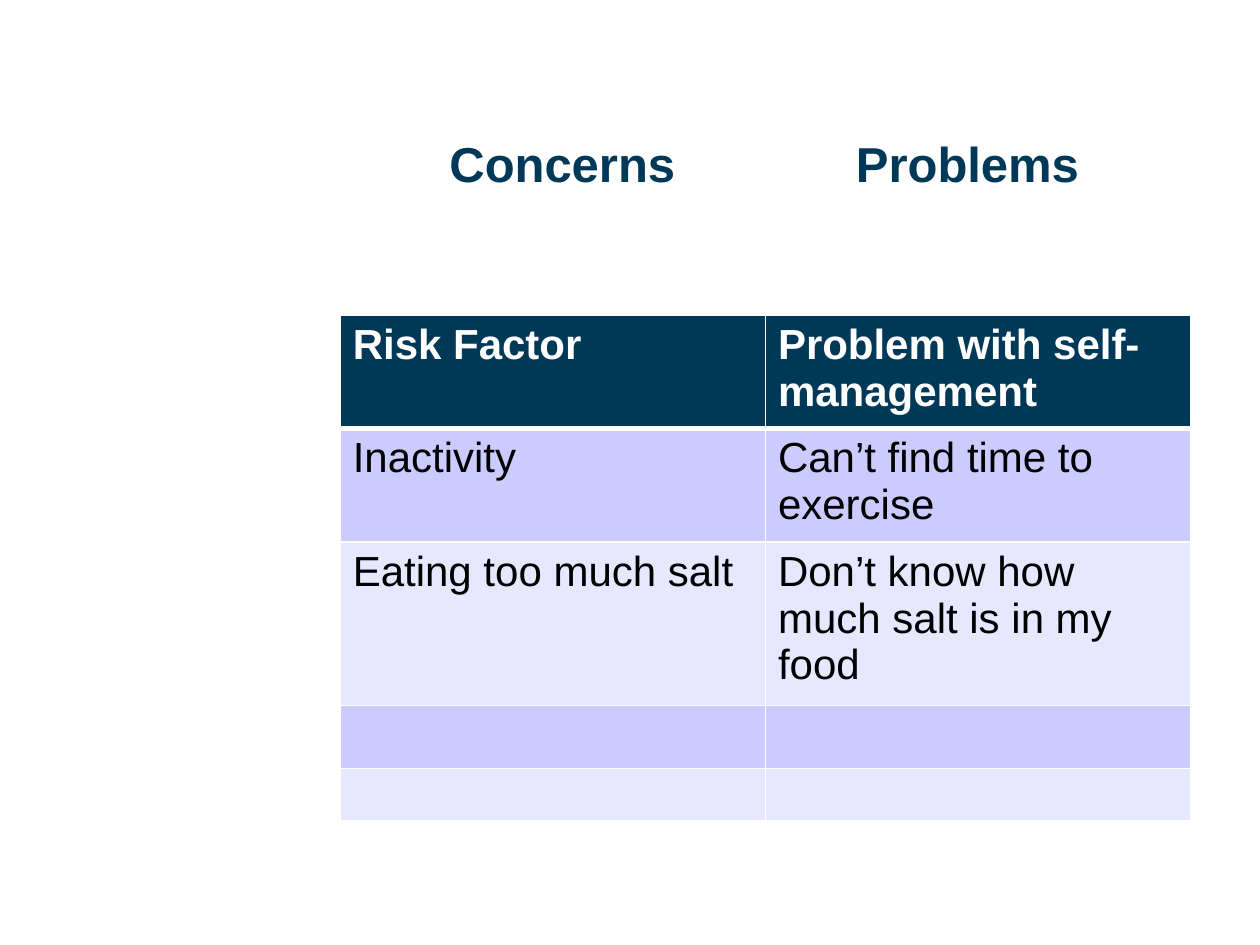
from lxml import etree
from pptx import Presentation
from pptx.dml.color import RGBColor
from pptx.enum.text import MSO_ANCHOR
from pptx.oxml.ns import qn
from pptx.util import Inches, Pt

MIDDLE = MSO_ANCHOR.MIDDLE
NAVY = RGBColor(0x00, 0x39, 0x58)
WHITE = RGBColor(0xFF, 0xFF, 0xFF)
BLACK = RGBColor(0x00, 0x00, 0x00)
LILAC = RGBColor(0xCB, 0xCB, 0xFF)
PALE = RGBColor(0xE7, 0xE7, 0xFF)

WIDTH, HEIGHT = 10, 7.5
TITLE_BOX = (2.25, 0.67, 7.17, 1.25)
TABLE_BOX = (2.7, 2.5, 6.75, 4.01)
HEADS = ["Concerns", "Problems"]
STOPS = [0.17, 0.62]  # shares of the title's width
ROWS = [
    ("Risk Factor", "Problem with self-management"),
    ("Inactivity", "Can’t find time to exercise"),
    ("Eating too much salt", "Don’t know how much salt is in my food"),
    ("", ""),
    ("", ""),
]
ROW_HEIGHTS = [0.9, 0.9, 1.3, 0.5, 0.41]


def write(frame, text, size=24, color=BLACK, bold=False, stops=()):
    para = frame.paragraphs[0]
    if stops:
        tabs = etree.SubElement(para._p.get_or_add_pPr(), qn("a:tabLst"))
        for stop in stops:
            etree.SubElement(tabs, qn("a:tab"), pos=str(Inches(stop)), algn="l")
    run = para.add_run()
    run.text = text
    font = run.font
    font.name, font.size, font.bold = "Arial", Pt(size), bold
    font.color.rgb = color


def add_title(slide, box):
    left, top, width, height = box
    shape = slide.shapes.add_textbox(*map(Inches, box))
    frame = shape.text_frame
    frame.word_wrap = True
    frame.vertical_anchor = MIDDLE
    text = "".join("\t" + head for head in HEADS)
    write(frame, text, size=28, color=NAVY, bold=True,
          stops=[share * width for share in STOPS])


def edge(cell, **widths):
    """Draw white borders; each side (L, R, T, B) has a width in points."""
    props = cell._tc.get_or_add_tcPr()
    for side, width in widths.items():
        line = etree.SubElement(props, qn(f"a:ln{side}"), w=str(Pt(width)))
        fill = etree.SubElement(line, qn("a:solidFill"))
        etree.SubElement(fill, qn("a:srgbClr"), val=str(WHITE))


def add_grid(slide, box):
    count = len(ROWS[0])
    table = slide.shapes.add_table(len(ROWS), count, *map(Inches, box)).table
    for col in table.columns:
        col.width = Inches(box[2] / count)
    for i, (texts, height) in enumerate(zip(ROWS, ROW_HEIGHTS)):
        table.rows[i].height = Inches(height)
        head = i == 0
        for j, text in enumerate(texts):
            cell = table.cell(i, j)
            edge(cell, L=1, R=1, T=3 if i == 1 else 1, B=3 if head else 1)
            cell.fill.solid()
            cell.fill.fore_color.rgb = NAVY if head else LILAC if i % 2 else PALE
            if text:
                write(cell.text_frame, text, bold=head,
                      color=WHITE if head else BLACK)


def main():
    deck = Presentation()
    deck.slide_width, deck.slide_height = Inches(WIDTH), Inches(HEIGHT)
    slide = deck.slides.add_slide(deck.slide_layouts[6])
    add_title(slide, TITLE_BOX)
    add_grid(slide, TABLE_BOX)
    deck.save("out.pptx")


if __name__ == "__main__":
    main()
